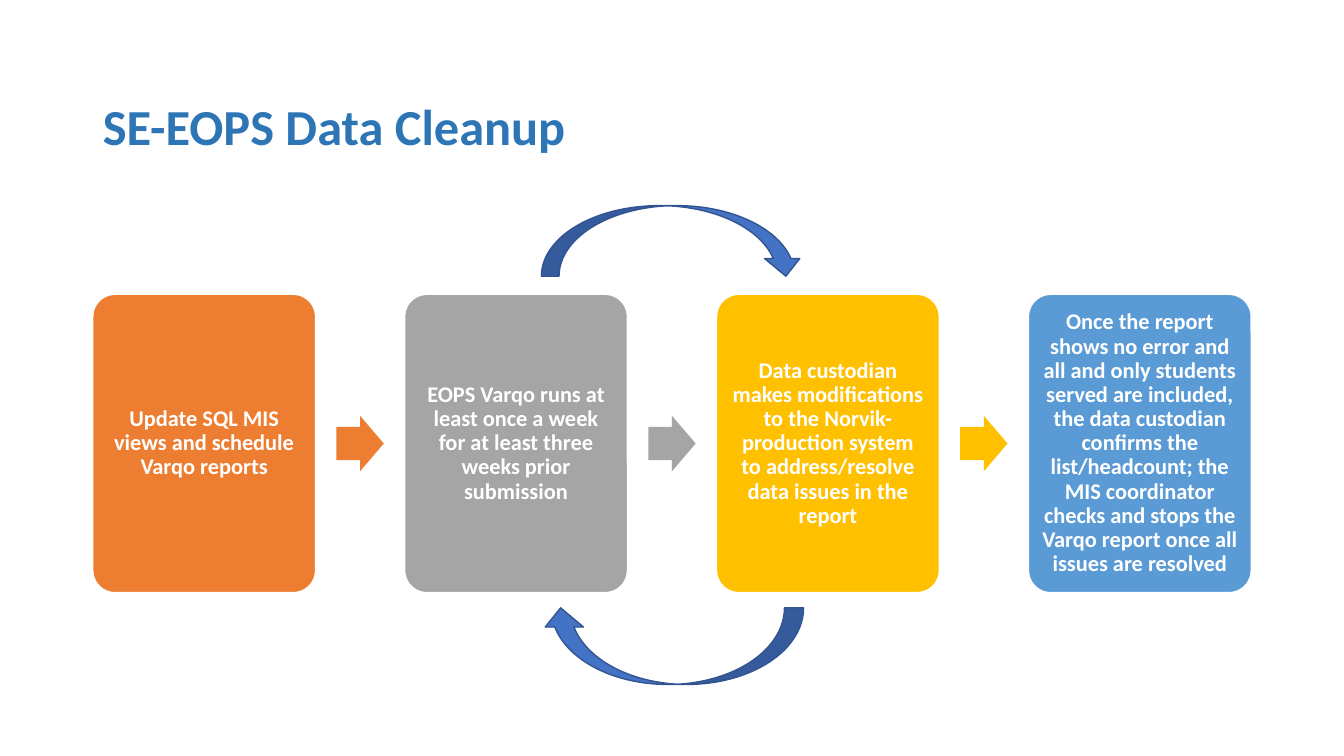
from pptx import Presentation
from pptx.dml.color import RGBColor
from pptx.enum.shapes import MSO_SHAPE
from pptx.enum.text import MSO_ANCHOR, MSO_AUTO_SIZE, PP_ALIGN
from pptx.util import Inches, Pt

COLOURS = {
    "title": "2E75B6",
    "white": "FFFFFF",
    "orange": "ED7D31",
    "grey": "A5A5A5",
    "yellow": "FFC000",
    "sky": "5B9BD5",
    "loop": "4472C4",
    "loop_edge": "325491",
}
FONT = "Calibri"

MARGIN = 0.92
CONTENT_WIDTH = 11.49
STEP_TOP, STEP_WIDTH, STEP_HEIGHT = 2.92, 2.21, 2.96
ARROW_WIDTH, ARROW_HEIGHT = 0.47, 0.55
LOOP_LEFT, LOOP_WIDTH = 5.37, 2.6

STEPS = [
    ("orange", "Update SQL MIS views and schedule Varqo reports"),
    ("grey", "EOPS Varqo runs at least once a week for at least three weeks "
             "prior submission"),
    ("yellow", "Data custodian makes modifications to the Norvik-production "
               "system to address/resolve data issues in the report"),
    ("sky", "Once the report shows no error and all and only students served "
            "are included, the data custodian confirms the list/headcount; "
            "the MIS coordinator checks and stops the Varqo report once all "
            "issues are resolved"),
]
COLUMN_PITCH = (CONTENT_WIDTH - STEP_WIDTH) / (len(STEPS) - 1)


def colour(name):
    return RGBColor.from_string(COLOURS[name])


def write_text(shape, text, size, colour_name, alignment):
    frame = shape.text_frame
    frame.word_wrap = True
    frame.auto_size = MSO_AUTO_SIZE.NONE
    frame.vertical_anchor = MSO_ANCHOR.MIDDLE
    para = frame.paragraphs[0]
    para.alignment = alignment
    para.line_spacing = 0.9
    span = para.add_run()
    span.text = text
    span.font.name = FONT
    span.font.size = Pt(size)
    span.font.bold = True
    span.font.color.rgb = colour(colour_name)


def add_title(page, text):
    title = page.shapes.title
    title.left, title.top = Inches(MARGIN), Inches(0.56)
    title.width, title.height = Inches(11.5), Inches(1.45)
    write_text(title, text, 36, "title", PP_ALIGN.LEFT)


def add_block(page, kind, left, top, width, height, fill, edge=None):
    """Add a flat preset shape, outlined only when an edge colour is given."""
    block = page.shapes.add_shape(
        kind, Inches(left), Inches(top), Inches(width), Inches(height))
    block.shadow.inherit = False
    block.fill.solid()
    block.fill.fore_color.rgb = colour(fill)
    if edge:
        block.line.color.rgb = colour(edge)
        block.line.width = Pt(1)
    else:
        block.line.fill.background()
    return block


def add_step(page, column, fill, text):
    left = MARGIN + column * COLUMN_PITCH
    box = add_block(page, MSO_SHAPE.ROUNDED_RECTANGLE, left, STEP_TOP,
                    STEP_WIDTH, STEP_HEIGHT, fill, "white")
    box.adjustments[0] = 0.1
    frame = box.text_frame
    frame.margin_left = frame.margin_right = Inches(0.07)
    frame.margin_top = frame.margin_bottom = Inches(0.07)
    write_text(box, text, 16, "white", PP_ALIGN.CENTER)


def add_step_arrow(page, column, fill):
    """Centre an arrow in the gap to the right of the given column."""
    gap = COLUMN_PITCH - STEP_WIDTH
    left = MARGIN + column * COLUMN_PITCH + STEP_WIDTH + (gap - ARROW_WIDTH) / 2
    top = STEP_TOP + (STEP_HEIGHT - ARROW_HEIGHT) / 2
    arrow = add_block(page, MSO_SHAPE.RIGHT_ARROW, left, top,
                      ARROW_WIDTH, ARROW_HEIGHT, fill)
    arrow.adjustments[0] = 0.6
    arrow.adjustments[1] = 0.5


def add_loop_arrow(page, top, height, rotation=0):
    arrow = add_block(page, MSO_SHAPE.CURVED_DOWN_ARROW, LOOP_LEFT, top,
                      LOOP_WIDTH, height, "loop", "loop_edge")
    arrow.rotation = rotation


def main():
    deck = Presentation()
    deck.slide_width, deck.slide_height = Inches(13.33), Inches(7.5)
    page = deck.slides.add_slide(deck.slide_layouts.get_by_name("Title Only"))

    add_title(page, "SE-EOPS Data Cleanup")
    for column, (fill, text) in enumerate(STEPS):
        add_step(page, column, fill, text)
        if column < len(STEPS) - 1:
            add_step_arrow(page, column, fill)
    add_loop_arrow(page, 2.04, 0.7)
    add_loop_arrow(page, 6.03, 0.76, rotation=180)

    deck.save("out.pptx")


if __name__ == "__main__":
    main()
